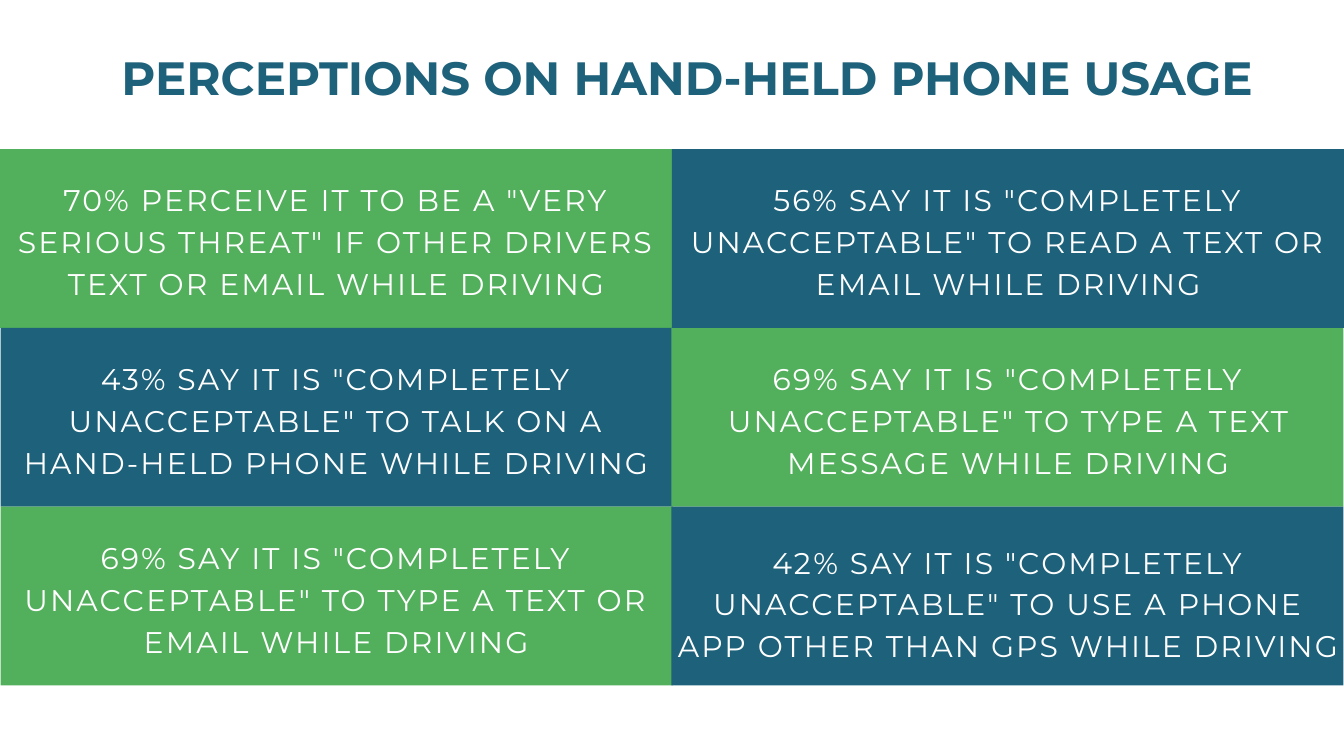
"""Build a slide of six survey findings on hand-held phone usage."""
from dataclasses import dataclass

from pptx import Presentation
from pptx.dml.color import RGBColor
from pptx.enum.shapes import MSO_SHAPE as Shape
from pptx.enum.text import MSO_AUTO_SIZE as AutoSize, PP_ALIGN as Align
from pptx.slide import Slide
from pptx.util import Inches, Pt

WHITE = RGBColor(0xFF, 0xFF, 0xFF)
GREEN = RGBColor(0x52, 0xAF, 0x5C)
BLUE = RGBColor(0x1D, 0x61, 0x7A)

PAGE_WIDTH, PAGE_HEIGHT = 20, 11.25
COLUMN_WIDTH = PAGE_WIDTH / 2
ROW_HEIGHT = 2.66
GRID_TOP = 2.22


@dataclass(frozen=True)
class TextStyle:
    """Type settings shared by every paragraph of a box."""

    size: float
    leading: float
    color: RGBColor
    bold: bool = False
    tracking: float = 0


@dataclass(frozen=True)
class Finding:
    """One survey finding and its cell in the grid."""

    column: int
    row: int
    lines: tuple[str, ...]
    inset: float = 0.24
    drop: float = 0.4
    width: float = 9.53


TITLE = TextStyle(50, 70, BLUE, bold=True)
BODY = TextStyle(32, 44.8, WHITE, tracking=2.2)

FINDINGS = (
    Finding(0, 0, ('70% PERCEIVE IT TO BE A "VERY SERIOUS THREAT" IF OTHER DRIVERS '
                   'TEXT OR EMAIL WHILE DRIVING',)),
    Finding(0, 1, ('43% SAY IT IS "COMPLETELY UNACCEPTABLE" TO TALK ON A '
                   'HAND-HELD PHONE WHILE DRIVING',)),
    Finding(1, 1, ('69% SAY IT IS "COMPLETELY UNACCEPTABLE" TO TYPE A TEXT',
                   'MESSAGE WHILE DRIVING')),
    Finding(1, 0, ('56% SAY IT IS "COMPLETELY UNACCEPTABLE" TO READ A TEXT OR '
                   'EMAIL WHILE DRIVING',)),
    Finding(0, 2, ('69% SAY IT IS "COMPLETELY UNACCEPTABLE" TO TYPE A TEXT OR '
                   'EMAIL WHILE DRIVING',)),
    Finding(1, 2, ('42% SAY IT IS "COMPLETELY UNACCEPTABLE" TO USE A PHONE '
                   'APP OTHER THAN GPS WHILE DRIVING',),
            inset=0.02, drop=0.47, width=9.97),
)


def add_text(page: Slide, left: float, top: float, width: float, height: float,
             lines: tuple[str, ...], style: TextStyle) -> None:
    """Add a centred text box with one paragraph per line."""
    box = page.shapes.add_textbox(Inches(left), Inches(top), Inches(width), Inches(height))
    frame = box.text_frame
    frame.word_wrap = True
    frame.auto_size = AutoSize.SHAPE_TO_FIT_TEXT
    frame.margin_left = frame.margin_right = frame.margin_top = frame.margin_bottom = 0
    for index, line in enumerate(lines):
        para = frame.add_paragraph() if index else frame.paragraphs[0]
        para.alignment = Align.CENTER
        para.line_spacing = Pt(style.leading)
        para.font.name = "Montserrat"
        para.font.size = Pt(style.size)
        para.font.bold = style.bold
        para.font.color.rgb = style.color
        span = para.add_run()
        span.text = line
        if style.tracking:
            span._r.get_or_add_rPr().set("spc", str(round(style.tracking * 100)))


def add_panel(page: Slide, finding: Finding) -> None:
    """Add the coloured rectangle behind a finding, alternating like a checkerboard."""
    nudge = 0.01 * (1 - 2 * finding.column) if finding.row else 0
    panel = page.shapes.add_shape(
        Shape.RECTANGLE,
        Inches(finding.column * COLUMN_WIDTH + nudge),
        Inches(GRID_TOP + finding.row * ROW_HEIGHT),
        Inches(COLUMN_WIDTH), Inches(ROW_HEIGHT))
    panel.shadow.inherit = False
    panel.fill.solid()
    panel.fill.fore_color.rgb = BLUE if (finding.column + finding.row) % 2 else GREEN
    panel.line.fill.background()


def add_finding(page: Slide, finding: Finding) -> None:
    """Add the panel and the wording of a finding."""
    add_panel(page, finding)
    add_text(page, finding.column * COLUMN_WIDTH + finding.inset,
             GRID_TOP + finding.row * ROW_HEIGHT + finding.drop,
             finding.width, 1.81, finding.lines, BODY)


def main() -> None:
    """Build the deck and save it."""
    deck = Presentation()
    deck.slide_width, deck.slide_height = Inches(PAGE_WIDTH), Inches(PAGE_HEIGHT)
    page = deck.slides.add_slide(deck.slide_layouts[6])
    add_text(page, 1.6, 0.59, 17.26, 0.95, ("PERCEPTIONS ON HAND-HELD PHONE USAGE",), TITLE)
    for finding in FINDINGS:
        add_finding(page, finding)
    deck.save("out.pptx")


if __name__ == "__main__":
    main()
